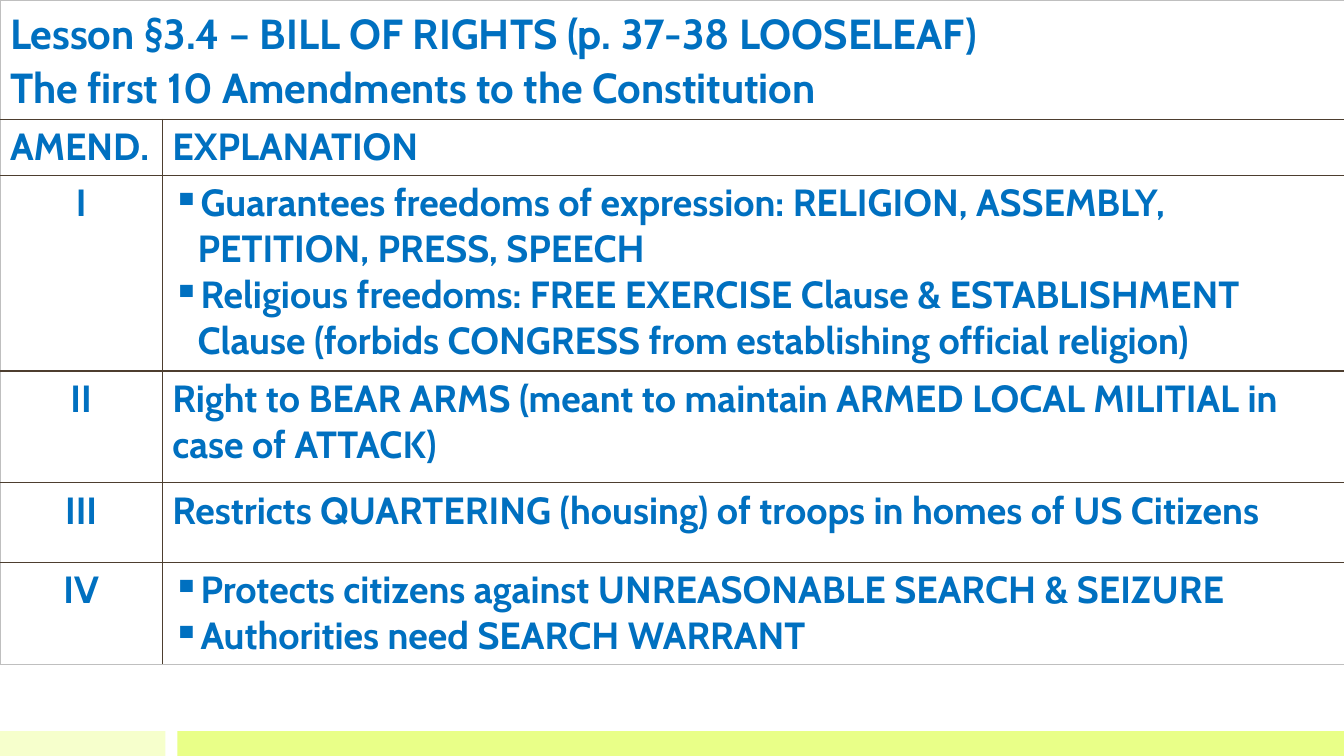
from pptx import Presentation
from pptx.dml.color import RGBColor
from pptx.enum.shapes import MSO_SHAPE
from pptx.enum.text import PP_ALIGN
from pptx.oxml import parse_xml
from pptx.oxml.ns import nsdecls
from pptx.util import Inches, Pt

WIDTH, HEIGHT = Inches(13.33), Inches(7.5)
TEXT_BLUE, RULE_BROWN, EDGE_GREY = "0070C0", "4D3E2F", "BFBFBF"
COLUMN_WIDTHS = [1.61, 11.73]
ROW_HEIGHTS = [0.8, 0.51, 1.94, 1.11, 0.79, 0.79]
TABLE_HEIGHT = 6.53
FOOTER_BARS = [(0, 0.123, "F6FFCC"), (0.132, 0.868, "E9FF88")]
FOOTER_TOP = 0.967

LESSON_TITLE = [
    "Lesson §3.4 – BILL OF RIGHTS (p. 37-38 LOOSELEAF)",
    "The first 10 Amendments to the Constitution",
]
AMENDMENTS = [
    ("I", [
        "Guarantees freedoms of expression: RELIGION, ASSEMBLY, PETITION, PRESS, SPEECH",
        "Religious freedoms: FREE EXERCISE Clause & ESTABLISHMENT Clause "
        "(forbids CONGRESS from establishing official religion)",
    ]),
    ("II", ["Right to BEAR ARMS (meant to maintain ARMED LOCAL MILITIAL in case of ATTACK)"]),
    ("III", ["Restricts QUARTERING (housing) of troops in homes of US Citizens"]),
    ("IV", [
        "Protects citizens against UNREASONABLE SEARCH & SEIZURE",
        "Authorities need SEARCH WARRANT",
    ]),
]


def color(hex_string):
    return RGBColor.from_string(hex_string)


def apply_format(target, values):
    for name, value in values.items():
        setattr(target, name, value)


def add_footer_bar(slide, left, width, fill):
    shape = slide.shapes.add_shape(
        MSO_SHAPE.RECTANGLE, int(WIDTH * left), int(HEIGHT * FOOTER_TOP),
        int(WIDTH * width), int(HEIGHT * (1 - FOOTER_TOP)))
    shape.shadow.inherit = False
    shape.fill.solid()
    shape.fill.fore_color.rgb = color(fill)
    shape.line.fill.background()


def add_bullet(paragraph):
    properties = paragraph._p.get_or_add_pPr()
    apply_indent = {"marL": Inches(0.25), "indent": Inches(-0.25)}
    for name, value in apply_indent.items():
        properties.set(name, str(value))
    properties.append(parse_xml(f'<a:buChar {nsdecls("a")} char="▪"/>'))


def write_cell(cell, lines, size=27, bulleted=False, **paragraph_format):
    cell.text = "\n".join(lines)
    for paragraph in cell.text_frame.paragraphs:
        apply_format(paragraph, paragraph_format)
        if bulleted:
            add_bullet(paragraph)
        font = paragraph.runs[0].font
        apply_format(font, {"name": "Cabin", "size": Pt(size), "bold": True})
        font.color.rgb = color(TEXT_BLUE)


def draw_borders(cell, outer_sides):
    properties = cell._tc.get_or_add_tcPr()
    for side in "LRTB":
        stroke, width = (EDGE_GREY, 0.5) if side in outer_sides else (RULE_BROWN, 1)
        properties.append(parse_xml(
            f'<a:ln{side} {nsdecls("a")} w="{Pt(width)}"><a:solidFill>'
            f'<a:srgbClr val="{stroke}"/></a:solidFill></a:ln{side}>'))
    cell.fill.background()


def style_grid(table):
    last_row, last_column = len(table.rows) - 1, len(table.columns) - 1
    for row_index, row in enumerate(table.rows):
        for column_index, cell in enumerate(row.cells):
            edges = {"L": column_index == 0, "R": column_index == last_column,
                     "T": row_index == 0, "B": row_index == last_row}
            draw_borders(cell, [side for side, outer in edges.items() if outer])


def add_amendment_table(slide):
    frame = slide.shapes.add_table(
        len(ROW_HEIGHTS), len(COLUMN_WIDTHS), 0, 0, WIDTH, Inches(TABLE_HEIGHT))
    table = frame.table
    apply_format(table, {"first_row": False, "horz_banding": False})
    for column, width in zip(table.columns, COLUMN_WIDTHS):
        column.width = Inches(width)
    for row, height in zip(table.rows, ROW_HEIGHTS):
        row.height = Inches(height)
    frame.height = Inches(TABLE_HEIGHT)
    style_grid(table)

    table.cell(0, 0).merge(table.cell(0, 1))
    write_cell(table.cell(0, 0), LESSON_TITLE, size=30, line_spacing=1.07)
    for column_index, heading in enumerate(["AMEND.", "EXPLANATION"]):
        write_cell(table.cell(1, column_index), [heading])
    for row_index, (numeral, explanation) in enumerate(AMENDMENTS, start=2):
        write_cell(table.cell(row_index, 0), [numeral], alignment=PP_ALIGN.CENTER)
        write_cell(table.cell(row_index, 1), explanation, bulleted=len(explanation) > 1)


def main():
    presentation = Presentation()
    apply_format(presentation, {"slide_width": WIDTH, "slide_height": HEIGHT})
    slide = presentation.slides.add_slide(presentation.slide_layouts[6])
    for left, width, fill in FOOTER_BARS:
        add_footer_bar(slide, left, width, fill)
    add_amendment_table(slide)
    presentation.save("out.pptx")


if __name__ == "__main__":
    main()
